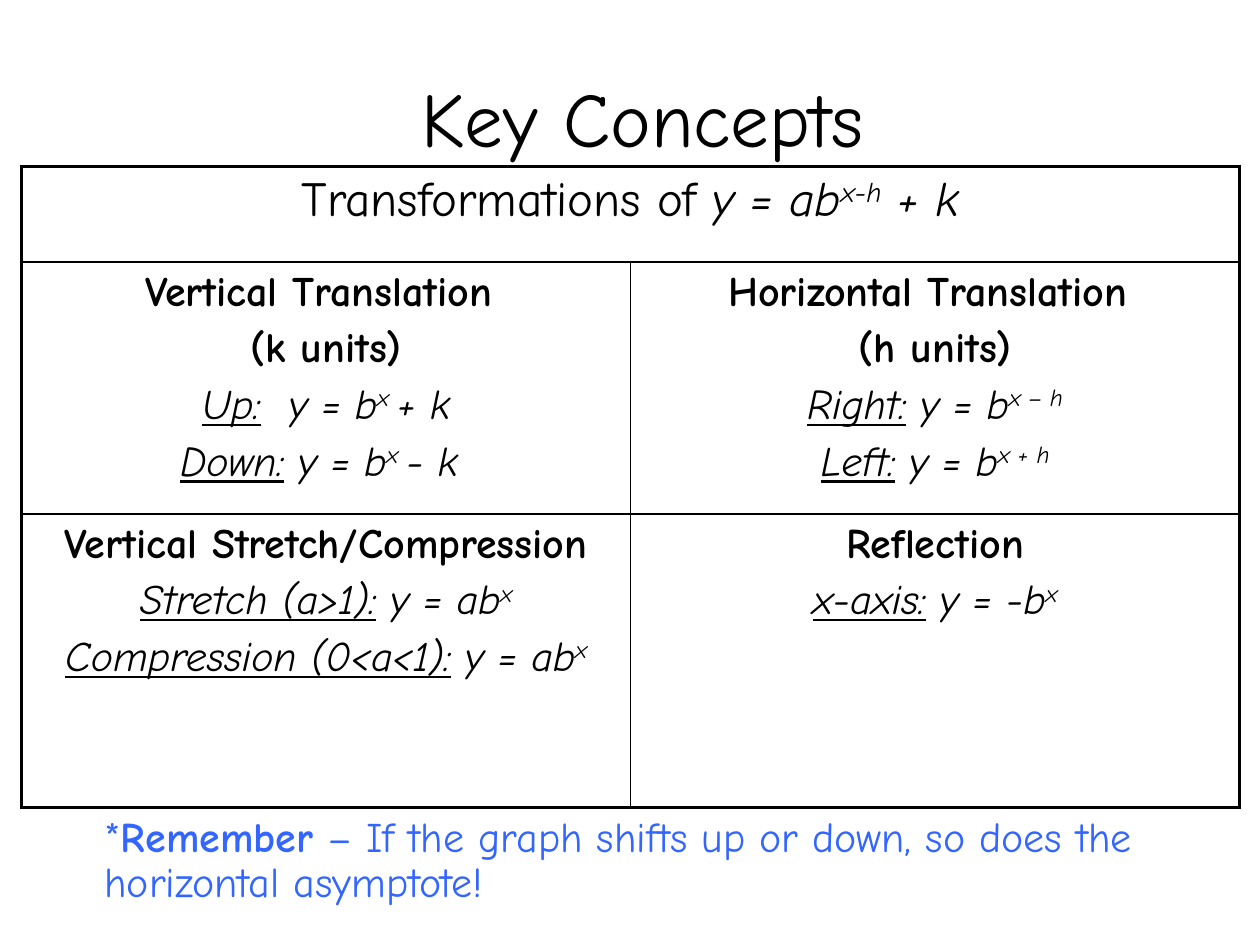
from itertools import product
from pptx import Presentation
from pptx.dml.color import RGBColor as RGB
from pptx.enum.text import MSO_ANCHOR as Anchor, MSO_AUTO_SIZE as Fit, PP_ALIGN as Align
from pptx.oxml import parse_xml
from pptx.oxml.ns import nsdecls
from pptx.util import Inches, Pt

theme = {
    "font": "Comic Neue", "ink": "000000", "note": "3366FF",
    "title": 44, "head": 28, "text": 24, "outer": 2.25, "inner": 1,
}


def write(para, parts, size, color):
    """Add (text, style) runs; style letters: b, i, u and ^ for superscript."""
    for text, style in parts:
        run = para.add_run()
        run.text = text
        font = run.font
        font.name, font.size = theme["font"], Pt(size)
        font.color.rgb = RGB.from_string(color)
        font.bold, font.italic = "b" in style, "i" in style
        font.underline = "u" in style
        if "^" in style:
            font._element.set("baseline", "30000")


def border(cell, side, width):
    cell._tc.get_or_add_tcPr().append(parse_xml(
        f'<a:ln{side} {nsdecls("a")} w="{Pt(width)}"><a:solidFill>'
        f'<a:srgbClr val="{theme["ink"]}"/></a:solidFill></a:ln{side}>'))


deck = Presentation()
deck.slide_width, deck.slide_height = Inches(10), Inches(7.5)
slide = deck.slides.add_slide(deck.slide_layouts[5])

# Title
title = slide.shapes.title
title.left, title.top = Inches(0.5), Inches(0.3)
title.width, title.height = Inches(9), Inches(1.25)
frame = title.text_frame
frame.vertical_anchor = Anchor.MIDDLE
frame.paragraphs[0].alignment = Align.CENTER
write(frame.paragraphs[0], [(" Key Concepts", "")], theme["title"], theme["ink"])

# Cell wording: one list of runs per line
cells = {
    (0, 0): [[("Transformations of ", ""), ("y = ab", "i"), ("x-h", "i^"), (" + k", "i")]],
    (1, 0): [
        [("Vertical Translation ", "b")],
        [("(k units)", "b")],
        [("Up:", "iu"), ("  ", ""), ("y = b", "i"), ("x ", "i^"), ("+ k", "i")],
        [("Down:", "iu"), (" ", ""), ("y = b", "i"), ("x ", "i^"), ("- k ", "i")],
    ],
    (1, 1): [
        [("Horizontal Translation ", "b")],
        [("(h units)", "b")],
        [("Right:", "iu"), (" ", ""), ("y = b", "i"), ("x – h", "i^")],
        [("Left:", "iu"), (" ", ""), ("y = b", "i"), ("x + h", "i^")],
    ],
    (2, 0): [
        [("Vertical Stretch/Compression", "b")],
        [("Stretch (a>1):", "iu"), (" y = ab", "i"), ("x", "i^")],
        [("Compression (0<a<1):", "iu"), (" y = ab", "i"), ("x", "i^")],
    ],
    (2, 1): [
        [("Reflection", "b")],
        [("x-axis:", "iu"), (" y = -b", "i"), ("x", "i^")],
    ],
}

# Table grid
rows = [0.76, 2, 2.33]
wide = 9.67
grid = slide.shapes.add_table(len(rows), 2, Inches(0.17), Inches(1.32),
                              Inches(wide), Inches(sum(rows))).table
grid.first_row = grid.horz_banding = False
for row, high in zip(grid.rows, rows):
    row.height = Inches(high)
for col in grid.columns:
    col.width = Inches(wide / 2)
grid.cell(0, 0).merge(grid.cell(0, 1))

# Borders: heavy around the table, thin inside
for r, c in product(range(len(rows)), range(2)):
    cell = grid.cell(r, c)
    edges = {"L": c == 0 or r == 0, "R": c == 1 or r == 0,
             "T": r == 0, "B": r == len(rows) - 1}
    for side, heavy in edges.items():
        border(cell, side, theme["outer" if heavy else "inner"])
    cell.fill.background()

# Cell text
for (r, c), lines in cells.items():
    frame = grid.cell(r, c).text_frame
    size = theme["text" if r else "head"]
    for n, parts in enumerate(lines):
        para = frame.add_paragraph() if n else frame.paragraphs[0]
        para.alignment = Align.CENTER
        para._p.get_or_add_pPr().append(parse_xml(
            f'<a:spcBef {nsdecls("a")}><a:spcPct val="20000"/></a:spcBef>'))
        write(para, parts, size, theme["ink"])

# Reminder under the table
note = slide.shapes.add_textbox(Inches(0.73), Inches(6.43), Inches(8.65), Inches(0.83))
frame = note.text_frame
frame.word_wrap = True
frame.auto_size = Fit.SHAPE_TO_FIT_TEXT
para = frame.paragraphs[0]
para.line_spacing = 0.9
write(para, [
    ("*", ""), ("Remember", "b"),
    (" – If the graph shifts up or down, so does the horizontal asymptote!", ""),
], theme["text"], theme["note"])

deck.save("out.pptx")
